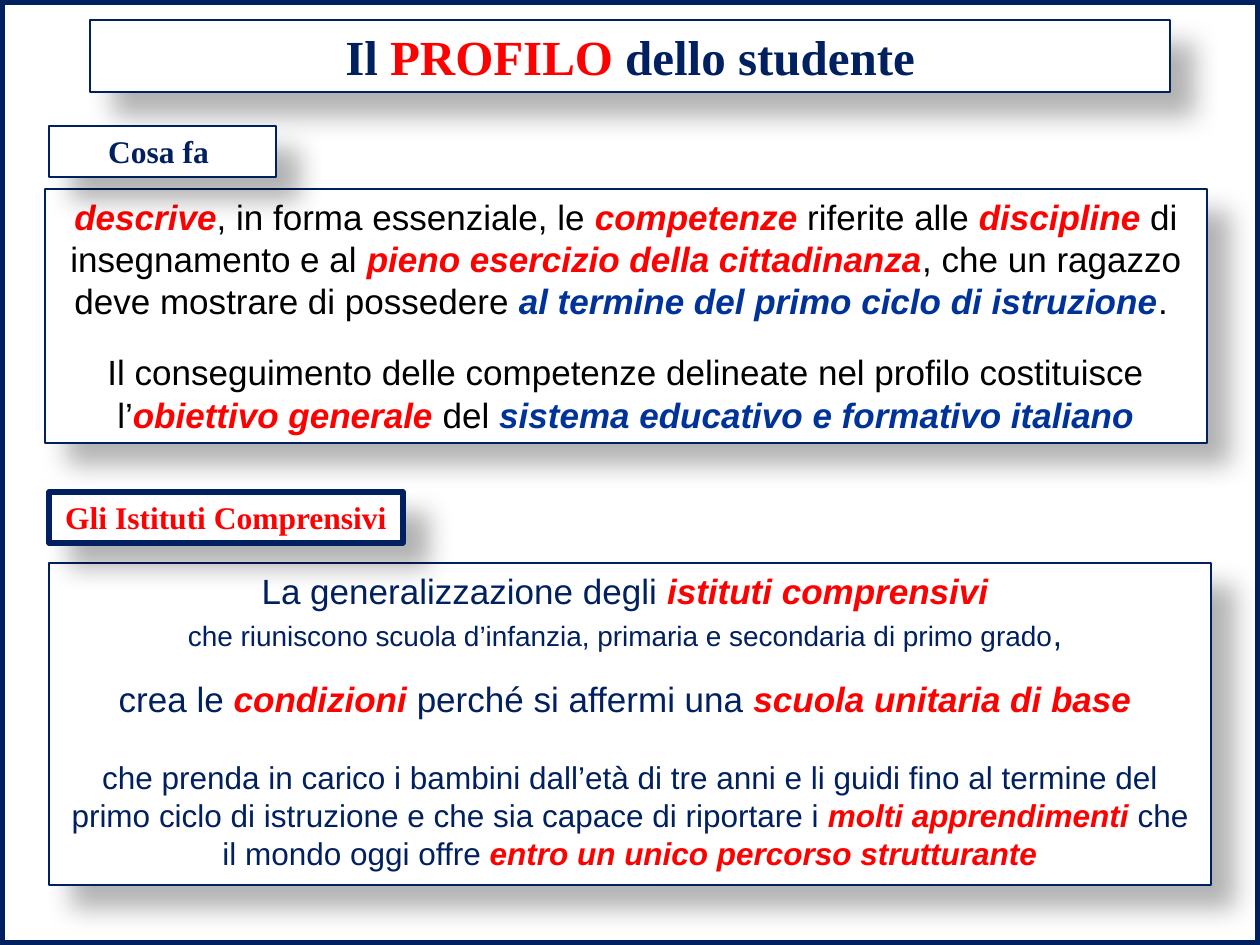
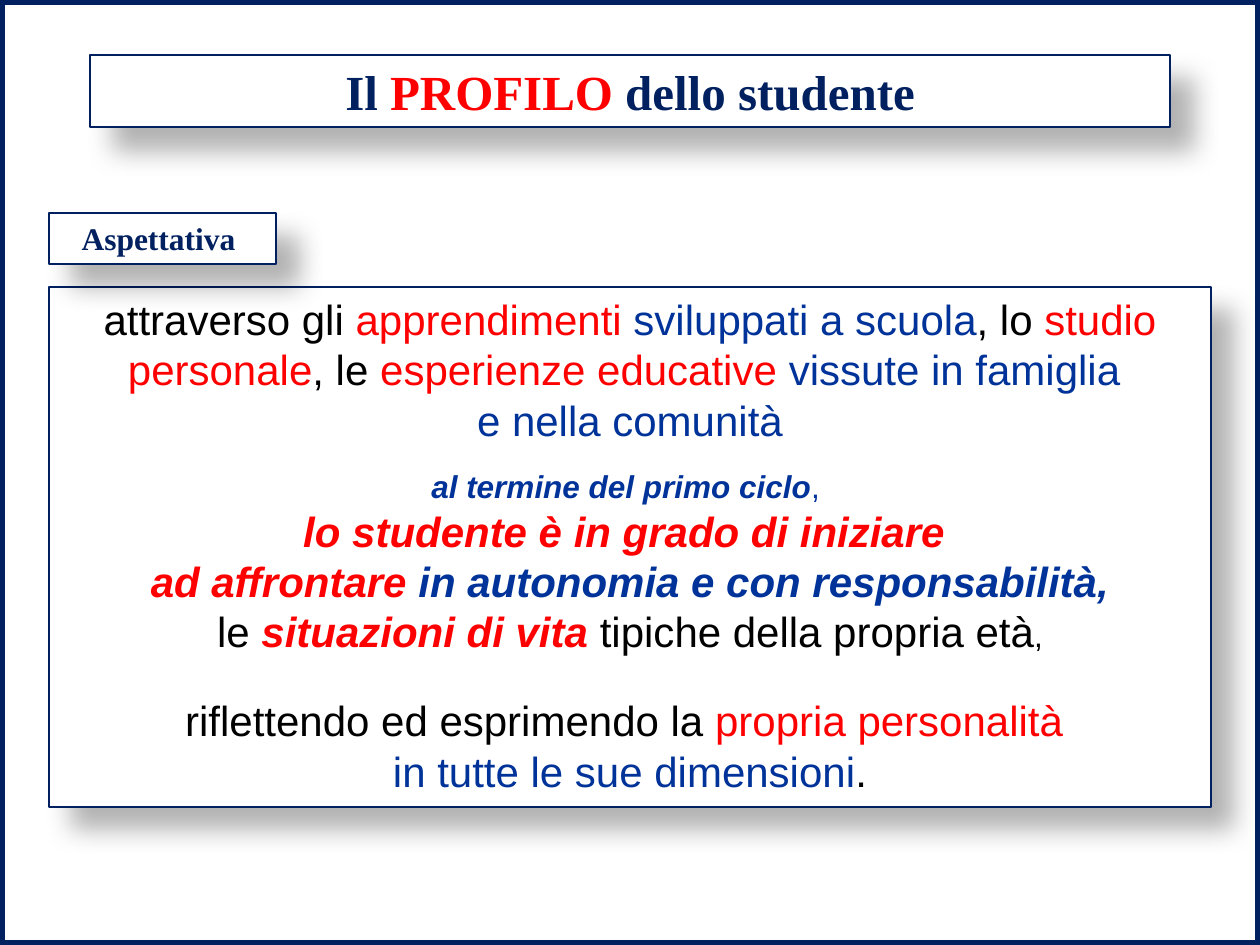
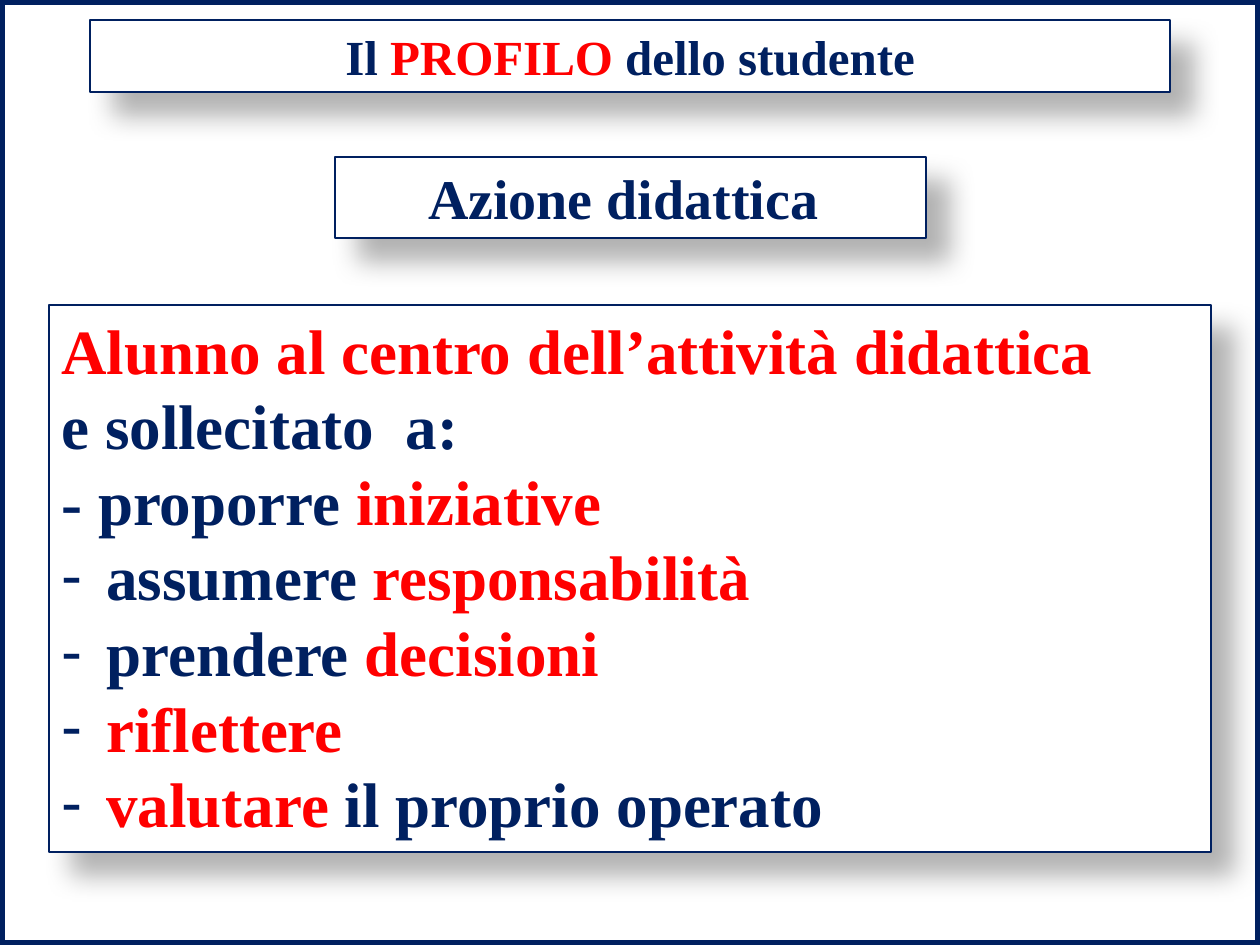
from dataclasses import dataclass
from typing import NamedTuple

from lxml.etree import SubElement
from pptx import Presentation
from pptx.dml.color import RGBColor
from pptx.enum.shapes import MSO_SHAPE as Preset
from pptx.enum.text import MSO_ANCHOR as Anchor, PP_ALIGN as Align
from pptx.oxml.ns import qn
from pptx.util import Emu, Pt

EMU_PER_PX = 914400 / 126
SLIDE_WIDTH, SLIDE_HEIGHT = 1260, 945


@dataclass(frozen=True)
class Theme:
    navy: str = "002060"
    blue: str = "003399"
    red: str = "FF0000"
    black: str = "000000"
    white: str = "FFFFFF"
    heading_font: str = "Times New Roman"
    body_font: str = "Arial"
    title_size: int = 28
    label_size: int = 18
    headline_size: int = 32
    list_size: int = 36
    frame_line: float = 6
    thin_line: float = 0.75
    thick_line: float = 3


THEME = Theme()


class Style(NamedTuple):
    color: str
    bold: bool = False
    italic: bool = False


class Run(NamedTuple):
    text: str
    style: Style
    size: int | None = None


class Line(NamedTuple):
    """One paragraph; gap is the space before it in points."""
    runs: list[Run]
    size: int
    gap: float = 0
    bullet: str = ""


class Box(NamedTuple):
    left: int
    top: int
    width: int
    height: int


BLACK, NAVY, BLUE, RED = map(Style, (THEME.black, THEME.navy, THEME.blue, THEME.red))
BLUE_STRONG, RED_STRONG = (Style(color, True, True) for color in (THEME.blue, THEME.red))
NAVY_BOLD, RED_BOLD = (Style(color, True) for color in (THEME.navy, THEME.red))


# Drawing helpers
def px(length: int) -> Emu:
    return Emu(round(length * EMU_PER_PX))


def add_text(paragraph, text: str, *, font: str, size: int, style: Style) -> None:
    run = paragraph.add_run()
    run.text = text
    run.font.name = font
    run.font.size = Pt(size)
    run.font.bold = style.bold
    run.font.italic = style.italic
    run.font.color.rgb = RGBColor.from_string(style.color)


def add_bullet(paragraph, character: str, indent: int = 45) -> None:
    properties = paragraph._p.get_or_add_pPr()
    properties.set("marL", str(px(indent)))
    properties.set("indent", str(-px(indent)))
    color = SubElement(properties, qn("a:buClr"))
    SubElement(color, qn("a:srgbClr"), val=THEME.navy)
    SubElement(properties, qn("a:buFont"), typeface=THEME.body_font)
    SubElement(properties, qn("a:buChar"), char=character)


def add_shadow(shape) -> None:
    effects = shape._element.spPr.find(qn("a:effectLst"))
    shadow = SubElement(effects, qn("a:outerShdw"), blurRad=str(Pt(15)), dist=str(Pt(18)),
                        dir=str(45 * 60000), algn="tl", rotWithShape="0")
    color = SubElement(shadow, qn("a:srgbClr"), val=THEME.black)
    SubElement(color, qn("a:alpha"), val="30000")


def add_rectangle(slide, box: Box, line_width: float):
    shape = slide.shapes.add_shape(Preset.RECTANGLE, *map(px, box))
    shape.shadow.inherit = False
    shape.fill.background()
    shape.line.color.rgb = RGBColor.from_string(THEME.navy)
    shape.line.width = Pt(line_width)
    return shape


def add_panel(slide, box: Box, lines: list[Line], *, font: str = THEME.body_font,
              align: Align = Align.CENTER, line_width: float = THEME.thin_line) -> None:
    shape = add_rectangle(slide, box, line_width)
    shape.fill.solid()
    shape.fill.fore_color.rgb = RGBColor.from_string(THEME.white)
    add_shadow(shape)
    frame = shape.text_frame
    frame.word_wrap = True
    frame.vertical_anchor = Anchor.TOP
    for index, line in enumerate(lines):
        paragraph = frame.add_paragraph() if index else frame.paragraphs[0]
        paragraph.alignment = align
        paragraph.space_before = Pt(line.gap)
        if line.bullet:
            add_bullet(paragraph, line.bullet)
        for run in line.runs:
            add_text(paragraph, run.text, font=font, size=run.size or line.size, style=run.style)


def add_label(slide, box: Box, text: str, *, size: int = THEME.label_size,
              style: Style = NAVY_BOLD, line_width: float = THEME.thin_line) -> None:
    add_panel(slide, box, [Line([Run(text, style)], size)],
              font=THEME.heading_font, line_width=line_width)


def add_framed_slide(presentation, title_top: int):
    slide = presentation.slides.add_slide(presentation.slide_layouts[6])
    add_rectangle(slide, Box(0, 0, SLIDE_WIDTH, SLIDE_HEIGHT), THEME.frame_line)
    title = [Run("Il ", NAVY_BOLD), Run("PROFILO ", RED_BOLD), Run("dello studente", NAVY_BOLD)]
    add_panel(slide, Box(90, title_top, 1080, 72), [Line(title, THEME.title_size)],
              font=THEME.heading_font)
    return slide


# Slide contents
PROFILE = [
    Line([
        Run("descrive", RED_STRONG), Run(", in forma essenziale, le ", BLACK),
        Run("competenze", RED_STRONG), Run(" riferite alle ", BLACK),
        Run("discipline", RED_STRONG), Run(" di insegnamento e al ", BLACK),
        Run("pieno esercizio della cittadinanza", RED_STRONG),
        Run(", che un ragazzo deve mostrare di possedere ", BLACK),
        Run("al termine del primo ciclo di istruzione", BLUE_STRONG), Run(". ", BLACK),
    ], 20),
    Line([
        Run("Il conseguimento delle competenze delineate nel profilo costituisce l’", BLACK),
        Run("obiettivo generale", RED_STRONG), Run(" del ", BLACK),
        Run("sistema educativo e formativo italiano", BLUE_STRONG),
    ], 20, gap=17),
]

INSTITUTES = [
    Line([Run("La generalizzazione degli ", NAVY), Run("istituti comprensivi ", RED_STRONG)], 20),
    Line([
        Run("che riuniscono scuola d’infanzia, primaria e secondaria di primo grado", NAVY, 16),
        Run(", ", NAVY),
    ], 20),
    Line([
        Run("crea le ", NAVY), Run("condizioni", RED_STRONG),
        Run(" perché si affermi una ", NAVY), Run("scuola unitaria di base ", RED_STRONG),
    ], 20, gap=14),
    Line([
        Run("che prenda in carico i bambini dall’età di tre anni e li guidi fino al termine "
            "del primo ciclo di istruzione e che sia capace di riportare i ", NAVY),
        Run("molti apprendimenti ", RED_STRONG), Run("che il mondo oggi offre ", NAVY),
        Run("entro un unico percorso strutturante", RED_STRONG),
    ], 18, gap=22),
]

EXPECTATION = [
    Line([
        Run("attraverso gli ", BLACK), Run("apprendimenti ", RED),
        Run("sviluppati a scuola", BLUE), Run(", lo", BLACK), Run(" studio personale", RED),
        Run(", le ", BLACK), Run("esperienze educative ", RED), Run("vissute in famiglia ", BLUE),
    ], 24),
    Line([Run("e nella comunità", BLUE)], 24),
    Line([Run("al termine del primo ciclo", BLUE_STRONG), Run(", ", BLUE)], 18, gap=13),
    Line([Run("lo studente è in grado di iniziare ", RED_STRONG)], 24),
    Line([Run("ad affrontare ", RED_STRONG),
          Run("in autonomia e con responsabilità,", BLUE_STRONG)], 24),
    Line([Run("le ", BLACK), Run("situazioni di vita ", RED_STRONG),
          Run("tipiche della propria età", BLACK), Run(",", BLACK, 18)], 24),
    Line([Run("riflettendo ed esprimendo la ", BLACK), Run("propria personalità ", RED)],
         24, gap=22),
    Line([Run("in tutte le sue dimensioni", BLUE), Run(".", BLACK)], 24),
]

ACTIONS = [
    Line([Run("Alunno al centro dell’attività didattica", RED_BOLD)], THEME.list_size),
    Line([Run("e sollecitato  a:", NAVY_BOLD)], THEME.list_size),
    Line([Run("- proporre ", NAVY_BOLD), Run("iniziative", RED_BOLD)], THEME.list_size),
] + [Line(runs, THEME.list_size, bullet="-") for runs in (
    [Run("assumere ", NAVY_BOLD), Run("responsabilità", RED_BOLD)],
    [Run("prendere ", NAVY_BOLD), Run("decisioni", RED_BOLD)],
    [Run("riflettere", RED_BOLD)],
    [Run("valutare", RED_BOLD), Run(" il proprio operato", NAVY_BOLD)],
)]


def main() -> None:
    presentation = Presentation()
    presentation.slide_width = px(SLIDE_WIDTH)
    presentation.slide_height = px(SLIDE_HEIGHT)

    # What the profile does, and the institutes
    slide = add_framed_slide(presentation, title_top=20)
    add_panel(slide, Box(45, 189, 1162, 254), PROFILE)
    add_panel(slide, Box(49, 563, 1162, 322), INSTITUTES)
    add_label(slide, Box(49, 492, 354, 51), "Gli Istituti Comprensivi",
              style=RED_BOLD, line_width=THEME.thick_line)
    add_label(slide, Box(49, 126, 227, 51), "Cosa fa ")

    # Expectation
    slide = add_framed_slide(presentation, title_top=55)
    add_panel(slide, Box(49, 287, 1162, 520), EXPECTATION)
    add_label(slide, Box(49, 213, 227, 51), "Aspettativa ")

    # Teaching action
    slide = add_framed_slide(presentation, title_top=20)
    add_panel(slide, Box(49, 305, 1162, 547), ACTIONS,
              font=THEME.heading_font, align=Align.LEFT)
    add_label(slide, Box(335, 157, 591, 81), "Azione didattica ", size=THEME.headline_size)

    presentation.save("out.pptx")


if __name__ == "__main__":
    main()
